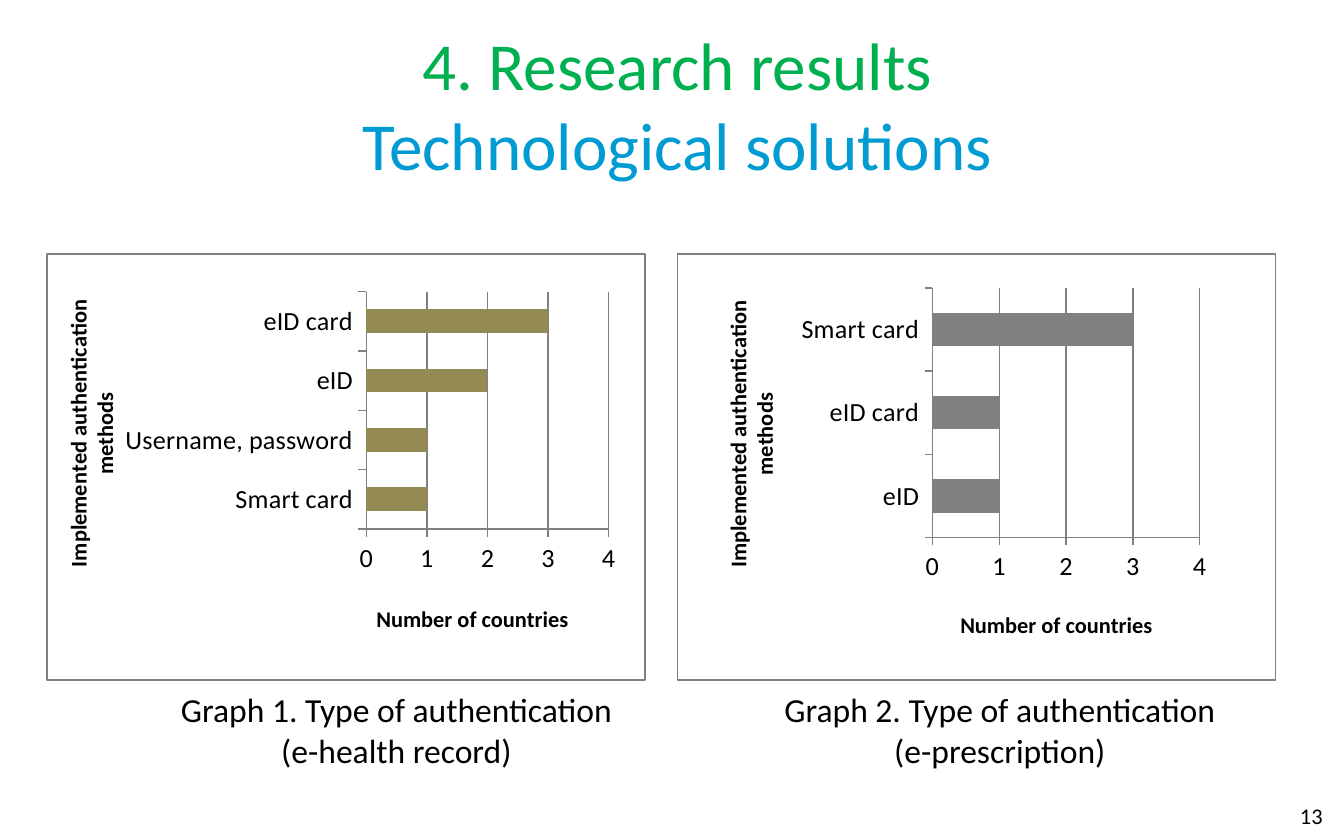
import pptx
import pptx.util
import pptx.chart.data
import pptx.dml.color
import pptx.enum.chart
import pptx.enum.shapes
import pptx.enum.text
import pptx.oxml

Pt = pptx.util.Pt
RGB = pptx.dml.color.RGBColor
ALIGN = pptx.enum.text.PP_ALIGN
GREEN = RGB(0x00, 0xB0, 0x50)
BLUE = RGB(0x00, 0x9B, 0xD2)
BLACK = RGB(0x00, 0x00, 0x00)
GREY = RGB(0x80, 0x80, 0x80)
OLIVE = RGB(0x94, 0x8A, 0x54)
FONT = "Calibri"
C_NS = "http://schemas.openxmlformats.org/drawingml/2006/chart"

prs = pptx.Presentation()
prs.slide_width = pptx.util.Inches(10)
prs.slide_height = pptx.util.Inches(6.25)
W, H = prs.slide_width / 100, prs.slide_height / 100
s = prs.slides.add_slide(prs.slide_layouts[6])


def add_text(box, lines, size, align, anchor):
    x, y, w, h = box
    tf = s.shapes.add_textbox(int(x * W), int(y * H), int(w * W), int(h * H)).text_frame
    tf.word_wrap = True
    tf.vertical_anchor = anchor
    p = tf.paragraphs[0]
    p.alignment = align
    for i, (text, color) in enumerate(lines):
        if i:
            p.add_line_break()
        r = p.add_run()
        r.text = text
        r.font.name = FONT
        r.font.size = Pt(size)
        r.font.color.rgb = color


def layout(**values):
    target = '<c:layoutTarget val="inner"/>' if "w" in values else ""
    modes = "".join(f'<c:{k}Mode val="edge"/>' for k in "xy")
    sizes = "".join(f'<c:{k} val="{v}"/>' for k, v in values.items())
    return pptx.oxml.parse_xml(
        f'<c:layout xmlns:c="{C_NS}"><c:manualLayout>{target}{modes}{sizes}'
        "</c:manualLayout></c:layout>")


MIDDLE = pptx.enum.text.MSO_ANCHOR.MIDDLE
TOP = pptx.enum.text.MSO_ANCHOR.TOP
add_text((1.4, 4, 98, 16.64),
         [("4. Research results", GREEN), ("Technological solutions", BLUE)], 36, ALIGN.CENTER, MIDDLE)
add_text((76.1, 94.4, 23.3, 5.28), [("13", BLACK)], 12, ALIGN.RIGHT, MIDDLE)

panels = [
    dict(chart=(3.5, 44, 49.6), frame=3.5, caption=12.4, color=OLIVE,
         cats=["Smart card", "Username, password", "eID", "eID card"], vals=[1, 1, 2, 3],
         plot=dict(x=0.54, y=0.09, w=0.41, h=0.57),
         title="Implemented authentication methods",
         cat_at=dict(x=0.02, y=0.1), val_at=dict(x=0.55, y=0.83),
         lines=["Graph 1. Type of authentication", "(e-health record)"]),
    dict(chart=(51.7, 44.2, 50.4), frame=50.4, caption=57.3, color=GREY,
         cats=["eID", "eID card", "Smart card"], vals=[1, 1, 3],
         plot=dict(x=0.4, y=0.08, w=0.45, h=0.59),
         title="Implemented authentication\nmethods",
         cat_at=dict(x=0.04, y=0.1), val_at=dict(x=0.44, y=0.83),
         lines=["Graph 2. Type of authentication", "(e-prescription)"]),
]

for panel in panels:
    data = pptx.chart.data.CategoryChartData()
    data.categories = panel["cats"]
    data.add_series("Series 1", panel["vals"])
    x, w, h = panel["chart"]
    chart = s.shapes.add_chart(
        pptx.enum.chart.XL_CHART_TYPE.BAR_CLUSTERED,
        int(x * W), int(30.24 * H), int(w * W), int(h * H), data).chart
    chart.has_legend = False
    chart.has_title = False
    chart.font.name = FONT
    chart.font.size = Pt(10)
    chart.font.color.rgb = BLACK
    plot = chart.plots[0]
    plot.vary_by_categories = False
    plot.gap_width = 150
    fill = plot.series[0].format.fill
    fill.solid()
    fill.fore_color.rgb = panel["color"]

    area = chart.element.chart.plotArea
    for old in area.findall(f"{{{C_NS}}}layout"):
        area.remove(old)
    area.insert(0, layout(**panel["plot"]))

    for axis, title, place in (
            (chart.category_axis, panel["title"], panel["cat_at"]),
            (chart.value_axis, "Number of countries", panel["val_at"])):
        axis.major_tick_mark = pptx.enum.chart.XL_TICK_MARK.OUTSIDE
        axis.minor_tick_mark = pptx.enum.chart.XL_TICK_MARK.NONE
        axis.tick_labels.font.size = Pt(14)
        axis.format.line.color.rgb = GREY
        axis.format.line.width = Pt(0.75)
        tf = axis.axis_title.text_frame
        for i, line in enumerate(title.split("\n")):
            p = tf.add_paragraph() if i else tf.paragraphs[0]
            r = p.add_run()
            r.text = line
            r.font.name = FONT
            r.font.size = Pt(12)
            r.font.bold = True
            r.font.color.rgb = BLACK
        el = axis.axis_title._element
        for old in el.findall(f"{{{C_NS}}}layout"):
            el.remove(old)
        el.find(f"{{{C_NS}}}tx").addnext(layout(**place))
    body = chart.category_axis.axis_title.text_frame._txBody.bodyPr
    body.set("rot", "-5400000")
    body.set("vert", "horz")

    axis = chart.value_axis
    axis.minimum_scale, axis.maximum_scale, axis.major_unit = 0, 4, 1
    axis.has_major_gridlines = True
    axis.major_gridlines.format.line.color.rgb = GREY
    axis.major_gridlines.format.line.width = Pt(0.75)

    sp = s.shapes.add_shape(
        pptx.enum.shapes.MSO_SHAPE.RECTANGLE,
        int(panel["frame"] * W), int(30.24 * H), int(44.5 * W), int(50.72 * H))
    sp.shadow.inherit = False
    sp.fill.background()
    sp.line.color.rgb = GREY
    sp.line.width = Pt(0.75)
    add_text((panel["caption"], 81.28, 34.2, 11.36),
             [(line, BLACK) for line in panel["lines"]], 18, ALIGN.CENTER, TOP)

prs.save("out.pptx")
